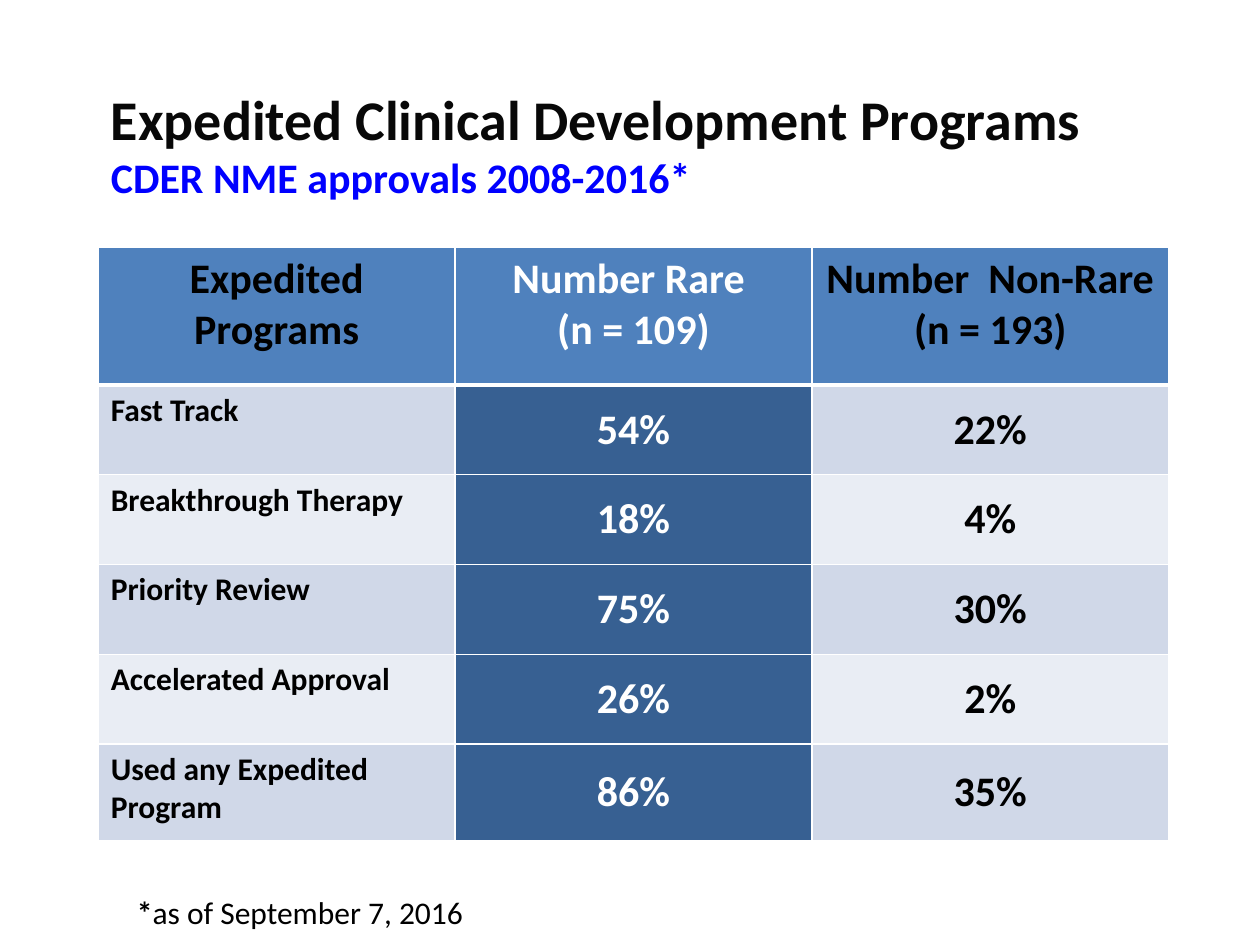
from lxml.etree import SubElement
from pptx import Presentation
from pptx.dml.color import RGBColor
from pptx.enum.text import MSO_ANCHOR, PP_ALIGN
from pptx.oxml.ns import qn
from pptx.util import Cm, Pt

BLACK = RGBColor(0x00, 0x00, 0x00)
NEAR_BLACK = RGBColor(0x08, 0x08, 0x08)
WHITE = RGBColor(0xFF, 0xFF, 0xFF)
BLUE = RGBColor(0x00, 0x00, 0xFF)
HEADER_BLUE = RGBColor(0x4F, 0x81, 0xBD)
RARE_BLUE = RGBColor(0x37, 0x60, 0x92)
BANDS = (RGBColor(0xD0, 0xD8, 0xE8), RGBColor(0xE9, 0xED, 0xF4))

LEFT, WIDTH = Cm(1.98), Cm(21.58)
HEADERS = (
    ("Expedited Programs",),
    ("Number Rare ", "(n = 109)"),
    ("Number  Non-Rare", "(n = 193)"),
)
PROGRAMS = (
    ("Fast Track", "54%", "22%"),
    ("Breakthrough Therapy", "18%", "4%"),
    ("Priority Review", "75%", "30%"),
    ("Accelerated Approval", "26%", "2%"),
    ("Used any Expedited Program", "86%", "35%"),
)
ROW_HEIGHTS = (Cm(2.77), *[Cm(1.81)] * 4, Cm(1.95))


def add_run(paragraph, text, size, color, bold=True):
    run = paragraph.add_run()
    run.text = text
    run.font.name = "Calibri"
    run.font.size = Pt(size)
    run.font.bold = bold
    run.font.color.rgb = color


def add_title(slide):
    title = slide.shapes.title
    title.left, title.top, title.width, title.height = LEFT, Cm(0.84), WIDTH, Cm(4.09)
    title.text_frame.vertical_anchor = MSO_ANCHOR.MIDDLE
    heading = title.text_frame.paragraphs[0]
    heading.alignment = PP_ALIGN.LEFT
    add_run(heading, "Expedited Clinical Development Programs", 32, NEAR_BLACK)
    heading.add_line_break()
    add_run(heading, "CDER NME approvals 2008-2016*", 24, BLUE)


def set_borders(cell, bottom):
    """Draw white borders, 1 pt wide except for the given bottom width."""
    properties = cell._tc.get_or_add_tcPr()
    for side, width in (("L", 1), ("R", 1), ("T", 1), ("B", bottom)):
        line = SubElement(properties, qn(f"a:ln{side}"), w=str(Pt(width)))
        fill = SubElement(line, qn("a:solidFill"))
        SubElement(fill, qn("a:srgbClr"), val=str(WHITE))


def fill_cell(cell, lines, size, color, background, alignment, anchor, bottom=1):
    set_borders(cell, bottom)
    cell.fill.solid()
    cell.fill.fore_color.rgb = background
    cell.vertical_anchor = anchor
    for index, line in enumerate(lines):
        frame = cell.text_frame
        paragraph = frame.add_paragraph() if index else frame.paragraphs[0]
        paragraph.alignment = alignment
        add_run(paragraph, line, size, color)


def add_programs_table(slide):
    table = slide.shapes.add_table(
        len(PROGRAMS) + 1, len(HEADERS), LEFT, Cm(4.99), WIDTH, sum(ROW_HEIGHTS)
    ).table
    for row, height in zip(table.rows, ROW_HEIGHTS):
        row.height = height

    for column, lines in enumerate(HEADERS):
        color = WHITE if column == 1 else BLACK
        fill_cell(table.cell(0, column), lines, 24, color, HEADER_BLUE,
                  PP_ALIGN.CENTER, MSO_ANCHOR.TOP, bottom=3)

    for row, (program, rare, non_rare) in enumerate(PROGRAMS, start=1):
        band = BANDS[(row - 1) % 2]
        fill_cell(table.cell(row, 0), [program], 18, BLACK, band,
                  PP_ALIGN.LEFT, MSO_ANCHOR.TOP)
        fill_cell(table.cell(row, 1), [rare], 24, WHITE, RARE_BLUE,
                  PP_ALIGN.CENTER, MSO_ANCHOR.MIDDLE)
        fill_cell(table.cell(row, 2), [non_rare], 24, BLACK, band,
                  PP_ALIGN.CENTER, MSO_ANCHOR.MIDDLE)


def add_footnote(slide):
    frame = slide.shapes.add_textbox(Cm(2.51), Cm(17.88), Cm(13.54), Cm(1.07)).text_frame
    frame.word_wrap = True
    note = frame.paragraphs[0]
    add_run(note, "*", 18, BLACK)
    add_run(note, "as of September 7, 2016", 18, BLACK, bold=False)


def main():
    presentation = Presentation()
    presentation.slide_width, presentation.slide_height = Cm(25.4), Cm(19.05)
    slide = presentation.slides.add_slide(presentation.slide_layouts[5])
    add_title(slide)
    add_programs_table(slide)
    add_footnote(slide)
    presentation.save("out.pptx")


if __name__ == "__main__":
    main()
